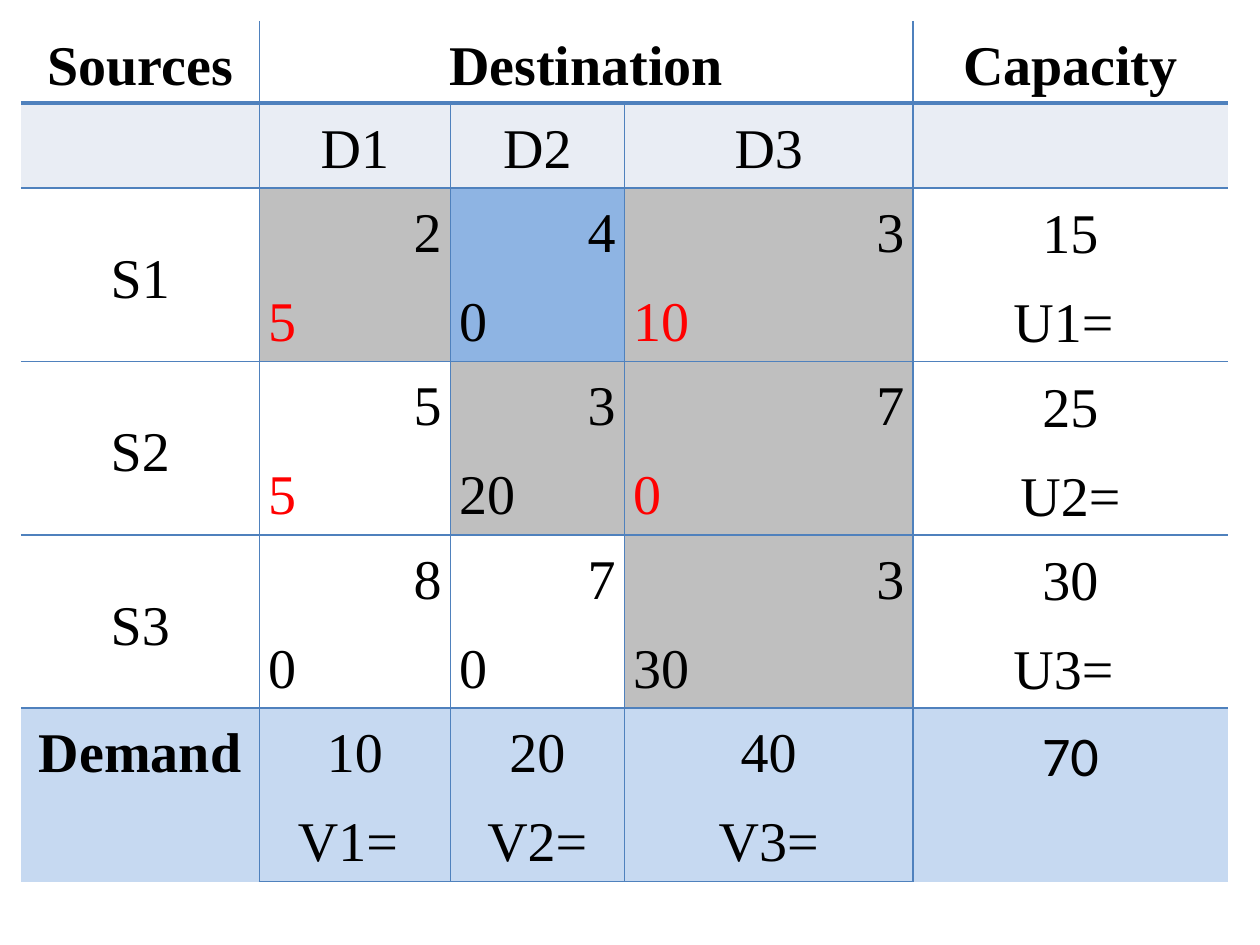
"""Build a slide with a transportation problem table."""
from lxml import etree
from pptx import Presentation
from pptx import util as u
from pptx.dml.color import RGBColor
from pptx.enum import text
from pptx.oxml.ns import qn

LEFT, MID, RIGHT = text.PP_ALIGN.LEFT, text.PP_ALIGN.CENTER, text.PP_ALIGN.RIGHT
BLUE, RED, BLACK = "4F81BD", "FF0000", "000000"
WHITE, PALE, GREY, SKY, BASE = "FFFFFF", "E9EDF4", "BFBFBF", "8EB4E3", "C6D9F1"


def write(cell, lines, aligns=(MID, MID), inks=(BLACK, BLACK), bold=False,
          font="Times New Roman", anchor=text.MSO_ANCHOR.MIDDLE):
    cell.vertical_anchor = anchor
    frame = cell.text_frame
    for i, line in enumerate(lines):
        para = frame.add_paragraph() if i else frame.paragraphs[0]
        para.alignment = aligns[i]
        para.line_spacing = 1.15
        para.space_after = u.Pt(10)
        run = para.add_run()
        run.text = line
        run.font.size = u.Pt(32)
        run.font.name = font
        run.font.bold = bold
        run.font.color.rgb = RGBColor.from_string(inks[i])


def edge(cell, side, width):
    line = etree.SubElement(cell._tc.get_or_add_tcPr(), qn("a:ln" + side), w=str(u.Pt(width)))
    if width:
        fill = etree.SubElement(line, qn("a:solidFill"))
        etree.SubElement(fill, qn("a:srgbClr"), val=BLUE)
    else:
        etree.SubElement(line, qn("a:noFill"))


deck = Presentation()
deck.slide_width, deck.slide_height = u.Pt(720), u.Pt(540)
slide = deck.slides.add_slide(deck.slide_layouts[6])

wide = [136.3, 109.1, 99.4, 165.1, 179.7]
high = [46.8, 48.6] + [99.1] * 4
grid = slide.shapes.add_table(len(high), len(wide), u.Pt(12), u.Pt(12),
                              u.Pt(sum(wide)), u.Pt(sum(high))).table
grid.first_row = grid.horz_banding = False
for col, size in zip(grid.columns, wide):
    col.width = u.Pt(size)
for row, size in zip(grid.rows, high):
    row.height = u.Pt(size)

fills = [[WHITE] * 5, [PALE] * 5,
         [WHITE, GREY, SKY, GREY, WHITE],
         [WHITE, WHITE, GREY, GREY, WHITE],
         [WHITE, WHITE, WHITE, GREY, WHITE],
         [BASE] * 5]
for r, shades in enumerate(fills):
    for c, shade in enumerate(shades):
        cell = grid.cell(r, c)
        cell.margin_left = cell.margin_right = u.Pt(5)
        cell.margin_top = cell.margin_bottom = u.Pt(2.9)
        edge(cell, "L", 1 if c > 0 else 0)
        edge(cell, "R", 1 if c < 4 else 0)
        edge(cell, "T", [0, 2.25, 1, 1, 1, 1][r])
        edge(cell, "B", 2.25 if r == 0 else 1 if r < 5 or 0 < c < 4 else 0)
        cell.fill.solid()
        cell.fill.fore_color.rgb = RGBColor.from_string(shade)

grid.cell(0, 1).merge(grid.cell(0, 3))
for c, head in [(0, "Sources"), (1, "Destination"), (4, "Capacity")]:
    write(grid.cell(0, c), [head], bold=True)
for c in (1, 2, 3):
    write(grid.cell(1, c), [f"D{c}"])

top = text.MSO_ANCHOR.TOP
plans = [("S1", [("2", "5", RED), ("4", "0", BLACK), ("3", "10", RED)], ["15", "U1= "]),
         ("S2", [("5", "5", RED), ("3", "20", BLACK), ("7", "0", RED)], ["25", "U2="]),
         ("S3", [("8", "0", BLACK), ("7", "0", BLACK), ("3", "30", BLACK)], ["30", "U3= "])]
for r, (name, routes, limit) in enumerate(plans, 2):
    write(grid.cell(r, 0), [name])
    for c, (cost, load, ink) in enumerate(routes, 1):
        write(grid.cell(r, c), [cost, load], aligns=(RIGHT, LEFT), inks=(BLACK, ink), anchor=top)
    write(grid.cell(r, 4), limit)

write(grid.cell(5, 0), ["Demand"], bold=True, anchor=top)
for c, lines in enumerate([["10", "V1= "], ["20", "V2="], ["40", "V3="]], 1):
    write(grid.cell(5, c), lines, anchor=top)
write(grid.cell(5, 4), ["70"], font="Calibri", anchor=top)

deck.save("out.pptx")
